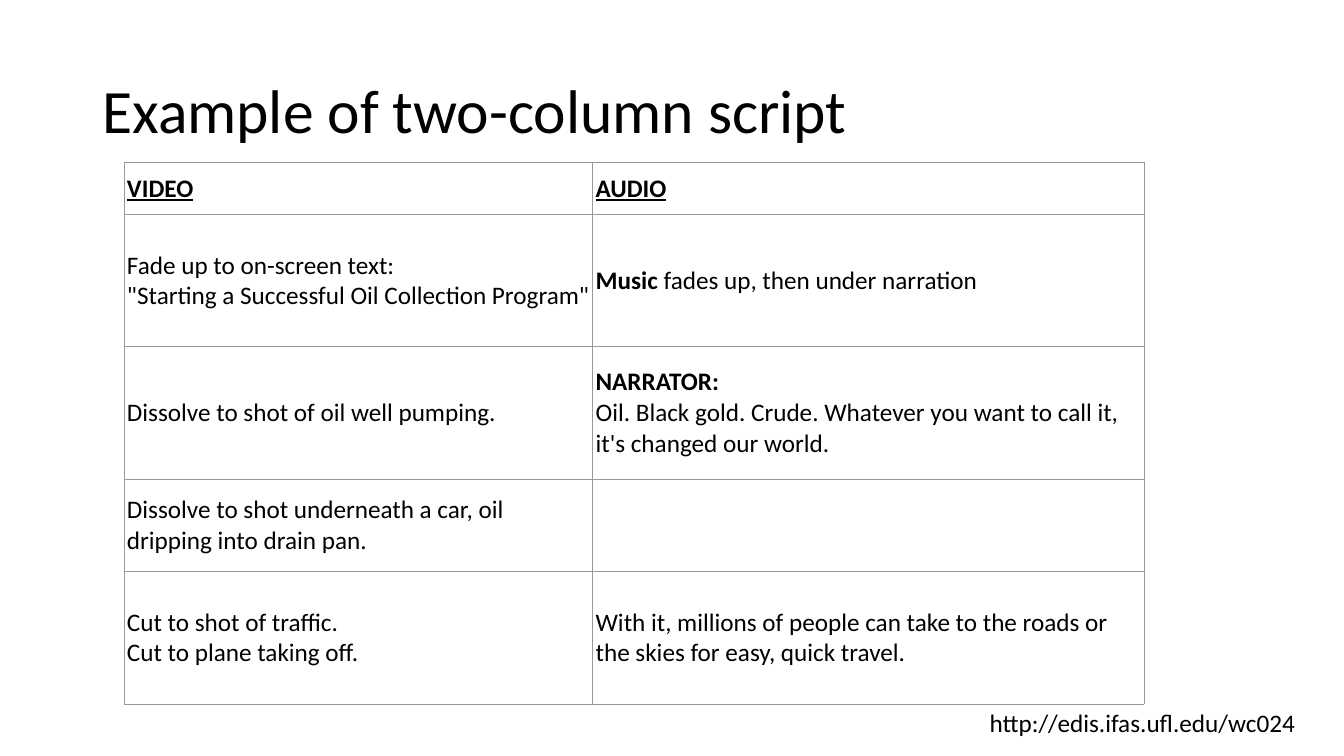
from dataclasses import dataclass

from lxml import etree
from pptx import Presentation
from pptx import util as u
from pptx.dml import color
from pptx.enum import text
from pptx.oxml import ns

FONT = "Calibri"
INK = "000000"
GRID = "999999"
EDGES = ("L", "R", "T", "B")
COLS = (11.81, 13.89)
ROWS = (1.32, 3.33, 3.33, 2.34, 3.33)


@dataclass(frozen=True)
class Run:
    words: str
    size: float = 18
    bold: bool = False
    line: bool = False


@dataclass(frozen=True)
class Box:
    left: float
    top: float
    width: float
    height: float
    run: Run
    anchor: text.MSO_ANCHOR
    wrap: bool
    space: float


Cell = list[list[Run]]

BOXES = [
    Box(2.33, 1.02, 29.21, 3.68, Run("Example of two-column script", 44),
        text.MSO_ANCHOR.MIDDLE, True, 0.9),
    Box(24.69, 17.7, 8.3, 1.02, Run("http://edis.ifas.ufl.edu/wc024"),
        text.MSO_ANCHOR.TOP, False, 1.0),
]

SCRIPT: list[tuple[Cell, Cell]] = [
    ([[Run("VIDEO", bold=True, line=True)]],
     [[Run("AUDIO", bold=True, line=True)]]),
    ([[Run("Fade up to on-screen text:")],
      [Run('"Starting a Successful Oil Collection Program"')]],
     [[Run("Music", bold=True), Run(" fades up, then under narration")]]),
    ([[Run("Dissolve to shot of oil well pumping.")]],
     [[Run("NARRATOR:", bold=True)],
      [Run("Oil. Black gold. Crude. Whatever you want to call it, "
           "it's changed our world.")]]),
    ([[Run("Dissolve to shot underneath a car, oil dripping into drain pan.")]],
     []),
    ([[Run("Cut to shot of traffic.")], [Run("Cut to plane taking off.")]],
     [[Run("With it, millions of people can take to the roads or the skies "
           "for easy, quick travel.")]]),
]


def tint(code: str) -> color.RGBColor:
    return color.RGBColor.from_string(code)


def add_run(para, run: Run) -> None:
    part = para.add_run()
    part.text = run.words
    font = part.font
    font.name = FONT
    font.size = u.Pt(run.size)
    font.bold = run.bold
    font.underline = run.line
    font.color.rgb = tint(INK)


def add_box(slide, box: Box) -> None:
    area = map(u.Cm, (box.left, box.top, box.width, box.height))
    frame = slide.shapes.add_textbox(*area).text_frame
    frame.word_wrap = box.wrap
    frame.vertical_anchor = box.anchor
    para = frame.paragraphs[0]
    para.line_spacing = box.space
    add_run(para, box.run)


def add_edges(cell) -> None:
    props = cell._tc.get_or_add_tcPr()
    for edge in EDGES:
        line = etree.SubElement(props, ns.qn(f"a:ln{edge}"), w=str(u.Pt(0.75)))
        fill = etree.SubElement(line, ns.qn("a:solidFill"))
        etree.SubElement(fill, ns.qn("a:srgbClr"), val=GRID)


def fill_cell(cell, paras: Cell) -> None:
    add_edges(cell)
    cell.fill.background()
    cell.vertical_anchor = text.MSO_ANCHOR.MIDDLE
    cell.margin_left = cell.margin_right = u.Cm(0.07)
    cell.margin_top = cell.margin_bottom = u.Cm(0.13)
    frame = cell.text_frame
    for i, runs in enumerate(paras):
        para = frame.add_paragraph() if i else frame.paragraphs[0]
        for run in runs:
            add_run(para, run)


def add_script(slide) -> None:
    area = map(u.Cm, (3.13, 4.09, sum(COLS), sum(ROWS)))
    table = slide.shapes.add_table(len(ROWS), len(COLS), *area).table
    table.first_row = False
    table.horz_banding = False
    for col, width in zip(table.columns, COLS):
        col.width = u.Cm(width)
    for row, height, cells in zip(table.rows, ROWS, SCRIPT):
        row.height = u.Cm(height)
        for cell, paras in zip(row.cells, cells):
            fill_cell(cell, paras)


def main() -> None:
    deck = Presentation()
    deck.slide_width = u.Cm(33.87)
    deck.slide_height = u.Cm(19.05)
    slide = deck.slides.add_slide(deck.slide_layouts[6])
    title, link = BOXES
    add_box(slide, title)
    add_script(slide)
    add_box(slide, link)
    deck.save("out.pptx")


if __name__ == "__main__":
    main()
